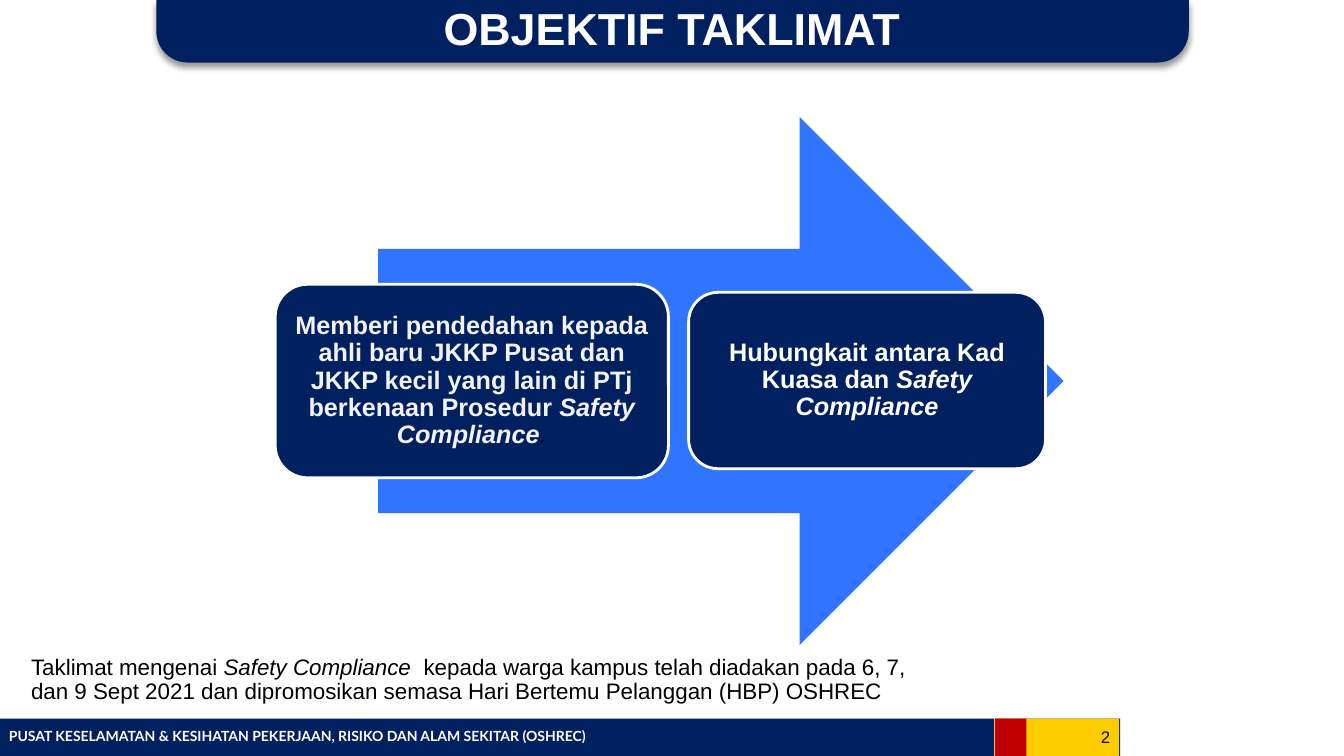
from lxml import etree
from pptx import Presentation
from pptx.dml.color import RGBColor
from pptx.enum.shapes import MSO_SHAPE as Shape
from pptx.enum.text import MSO_ANCHOR as Anchor, PP_ALIGN as Align
from pptx.oxml.ns import qn
from pptx.util import Inches, Pt

NAVY = RGBColor(0x00, 0x20, 0x60)
BLUE = RGBColor(0x2F, 0x75, 0xFF)
GOLD = RGBColor(0xFF, 0xCC, 0x00)
RED = RGBColor(0xC0, 0x00, 0x00)
WHITE = RGBColor(0xFF, 0xFF, 0xFF)
PALE = RGBColor(0xF2, 0xF2, 0xF2)
BLACK = RGBColor(0x00, 0x00, 0x00)


class Deck:
    font = "Arial"

    def __init__(self, slide):
        self.slide = slide

    def shape(self, kind, box, fill, adjust=(), edge=None):
        item = self.slide.shapes.add_shape(kind, *map(Inches, box))
        item.shadow.inherit = False
        item.fill.solid()
        item.fill.fore_color.rgb = fill
        for i, value in enumerate(adjust):
            item.adjustments[i] = value
        if edge is None:
            item.line.fill.background()
        else:
            item.line.color.rgb = edge
            item.line.width = Pt(2)
        return item

    def shade(self, item):
        """Soft shadow falling straight down."""
        effects = item._element.spPr.find(qn("a:effectLst"))
        outer = etree.SubElement(effects, qn("a:outerShdw"), {
            "blurRad": str(Pt(4)), "dist": str(Pt(3)),
            "dir": "5400000", "algn": "t", "rotWithShape": "0"})
        color = etree.SubElement(outer, qn("a:srgbClr"), val="000000")
        etree.SubElement(color, qn("a:alpha"), val="40000")

    def label(self, item, runs, look, align=Align.LEFT, anchor=Anchor.TOP,
              inset=(0.1, 0.05), space=1.0):
        """Fill a shape with runs of (text, changes to the look)."""
        frame = item.text_frame
        wide, high = map(Inches, inset)
        form = {"word_wrap": True, "vertical_anchor": anchor,
                "margin_left": wide, "margin_right": wide,
                "margin_top": high, "margin_bottom": high}
        for name, value in form.items():
            setattr(frame, name, value)
        para = frame.paragraphs[0]
        para.alignment = align
        para.line_spacing = space
        for text, change in runs:
            run = para.add_run()
            run.text = text
            style = {"name": self.font, **look, **change}
            run.font.color.rgb = style.pop("color")
            for name, value in style.items():
                setattr(run.font, name, value)

    def text(self, box, runs, look, **form):
        item = self.slide.shapes.add_textbox(*map(Inches, box))
        self.label(item, runs, look, **form)

    def card(self, box, runs, color):
        item = self.shape(Shape.ROUNDED_RECTANGLE, box, NAVY, [0.167], WHITE)
        self.label(item, runs, {"size": Pt(18), "bold": True, "color": color},
                   align=Align.CENTER, anchor=Anchor.MIDDLE,
                   inset=(0.07, 0.07), space=0.9)


def main():
    prs = Presentation()
    prs.slide_width, prs.slide_height = Inches(13.33), Inches(7.5)
    deck = Deck(prs.slides.add_slide(prs.slide_layouts[6]))
    slant = {"italic": True}

    # Title banner
    banner = deck.shape(Shape.ROUND_2_SAME_RECTANGLE, (1.55, 0, 10.24, 0.62),
                        NAVY, [0.5, 0])
    banner.rotation = 180
    deck.shade(banner)
    deck.text((1.86, 0.05, 9.61, 0.45), [("OBJEKTIF TAKLIMAT", {})],
              {"size": Pt(32), "bold": True, "color": WHITE},
              align=Align.CENTER, anchor=Anchor.MIDDLE)

    # Footer band
    for left, width, fill in ((0, 11.11, NAVY), (9.86, 1.24, GOLD),
                              (9.87, 0.31, RED)):
        deck.shape(Shape.RECTANGLE, (left, 7.13, width, 0.37), fill)
    deck.text((-0.01, 7.17, 9.29, 0.27),
              [("PUSAT KESELAMATAN & KESIHATAN PEKERJAAN, RISIKO DAN "
                "ALAM SEKITAR (OSHREC)", {})],
              {"name": "Lato", "size": Pt(10), "bold": True, "color": WHITE})
    deck.text((9.98, 7.13, 1.13, 0.35), [("2", {})],
              {"size": Pt(12), "color": BLACK},
              align=Align.RIGHT, anchor=Anchor.MIDDLE)

    # Arrow with the two aims
    deck.shape(Shape.RIGHT_ARROW, (3.75, 1.16, 6.8, 5.24), BLUE, [0.5, 0.5])
    deck.card((2.73, 2.82, 3.9, 1.92),
              [("Memberi pendedahan kepada ahli baru JKKP Pusat dan JKKP kecil "
                "yang lain di PTj berkenaan Prosedur ", {}),
               ("Safety Compliance", slant),
               (".", {"italic": True, "bold": False, "color": BLACK})], PALE)
    deck.card((6.83, 2.9, 3.54, 1.75),
              [("Hubungkait antara Kad Kuasa dan ", {}),
               ("Safety Compliance", slant)], WHITE)

    # Closing note
    deck.text((0.21, 6.46, 8.93, 0.59),
              [("Taklimat mengenai", {}),
               (" Safety Compliance  ", slant),
               ("kepada warga kampus telah diadakan pada 6, 7, dan 9 Sept 2021 "
                "dan dipromosikan semasa Hari Bertemu Pelanggan (HBP) OSHREC",
                {})],
              {"size": Pt(16), "color": BLACK}, space=0.9)

    prs.save("out.pptx")


if __name__ == "__main__":
    main()
